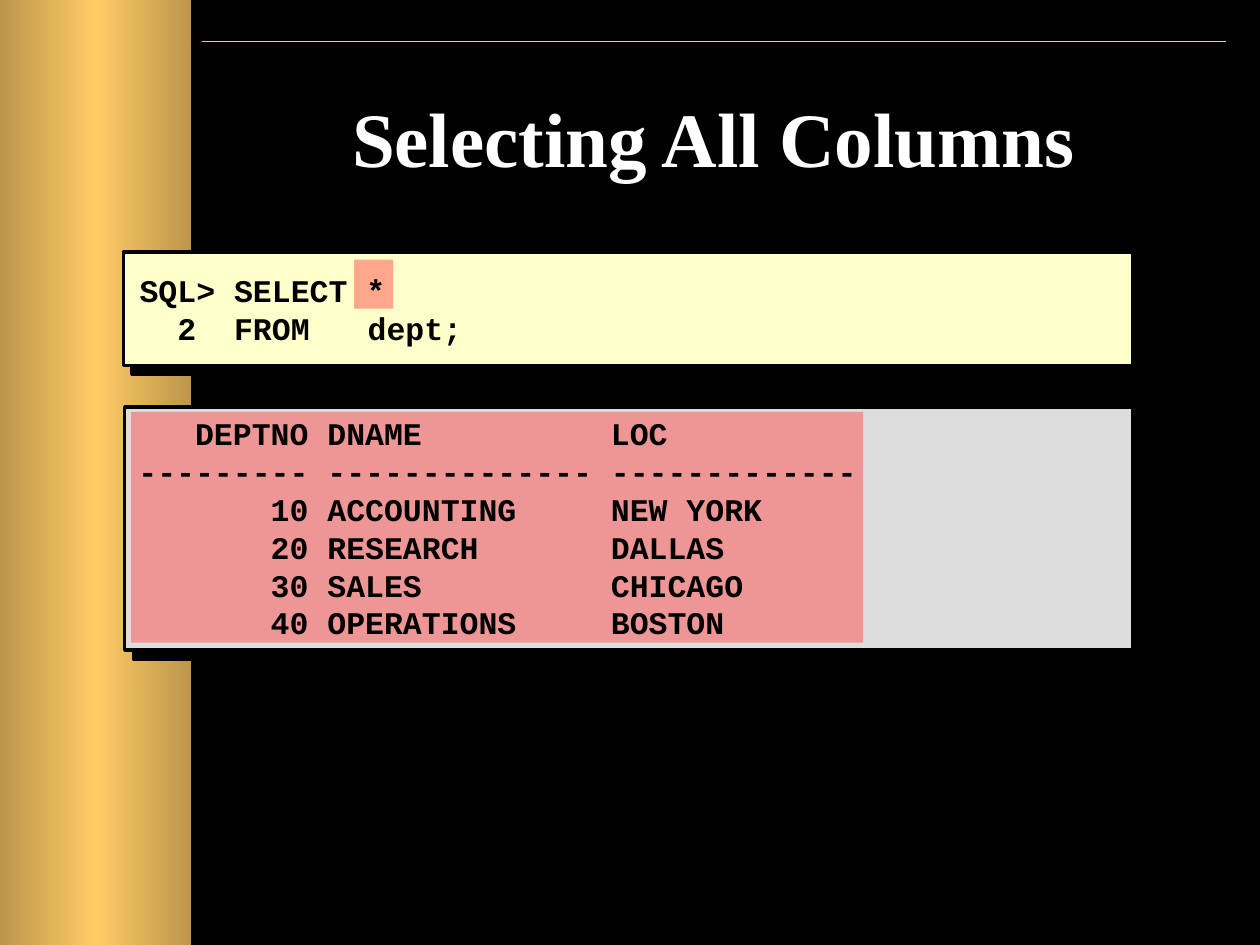
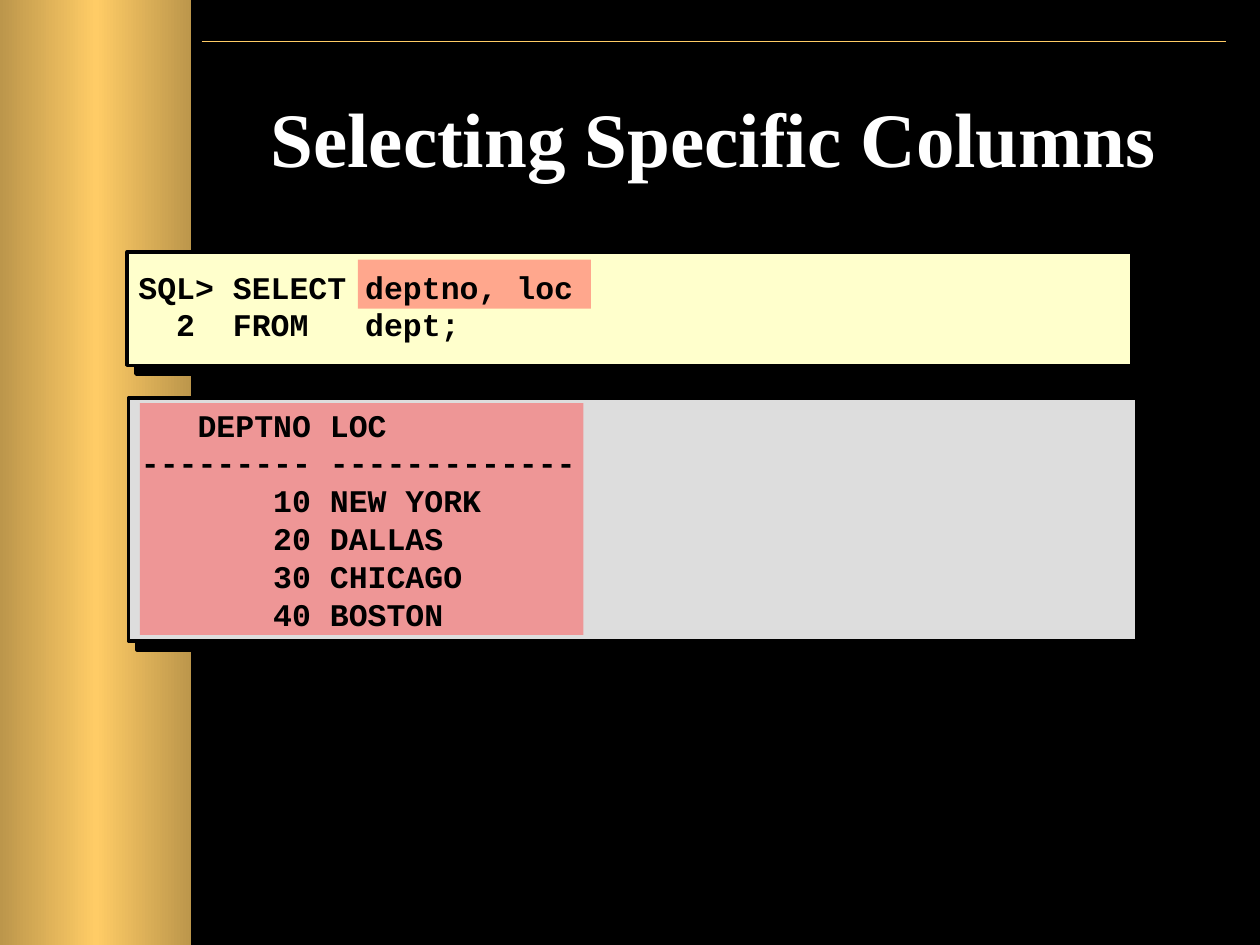
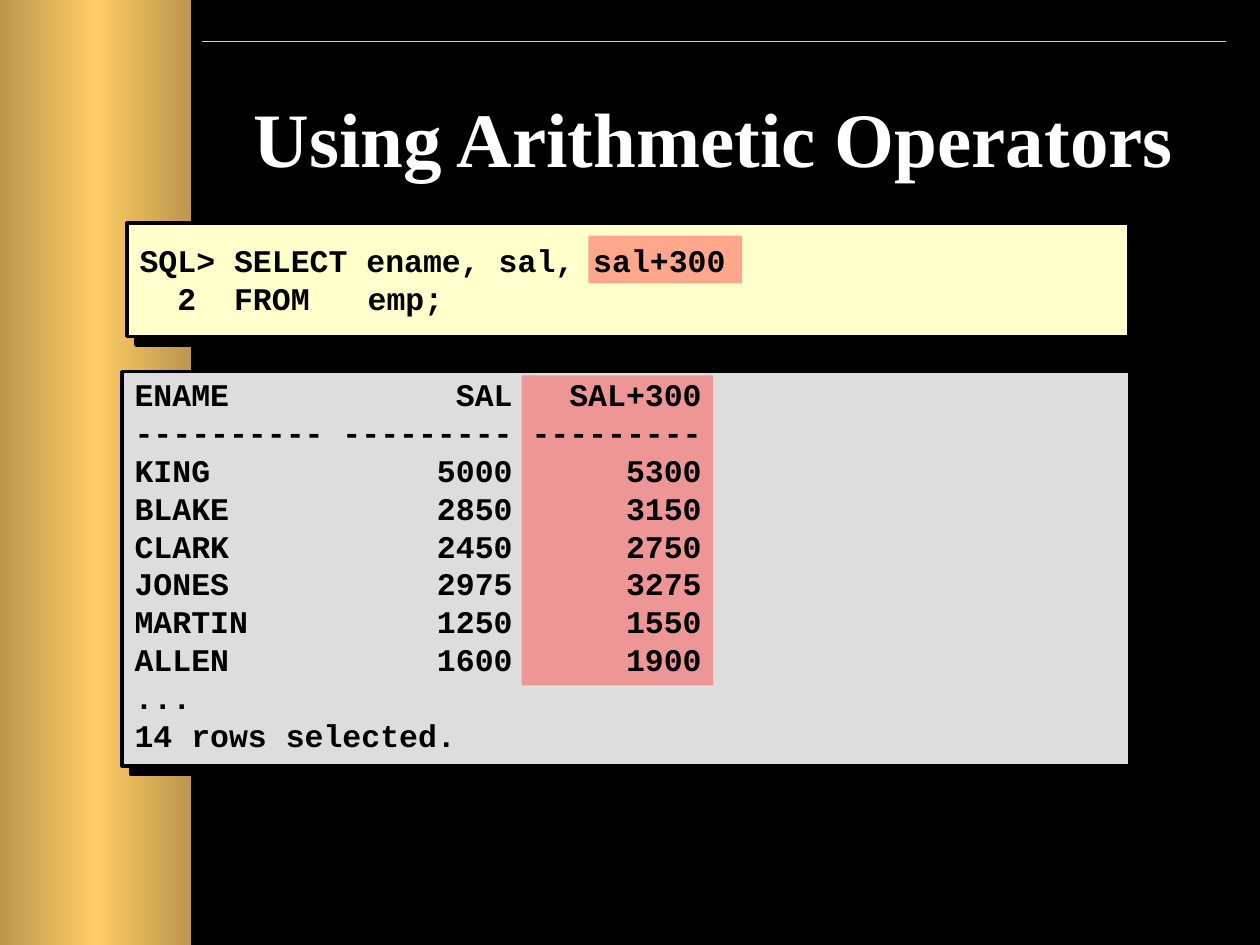
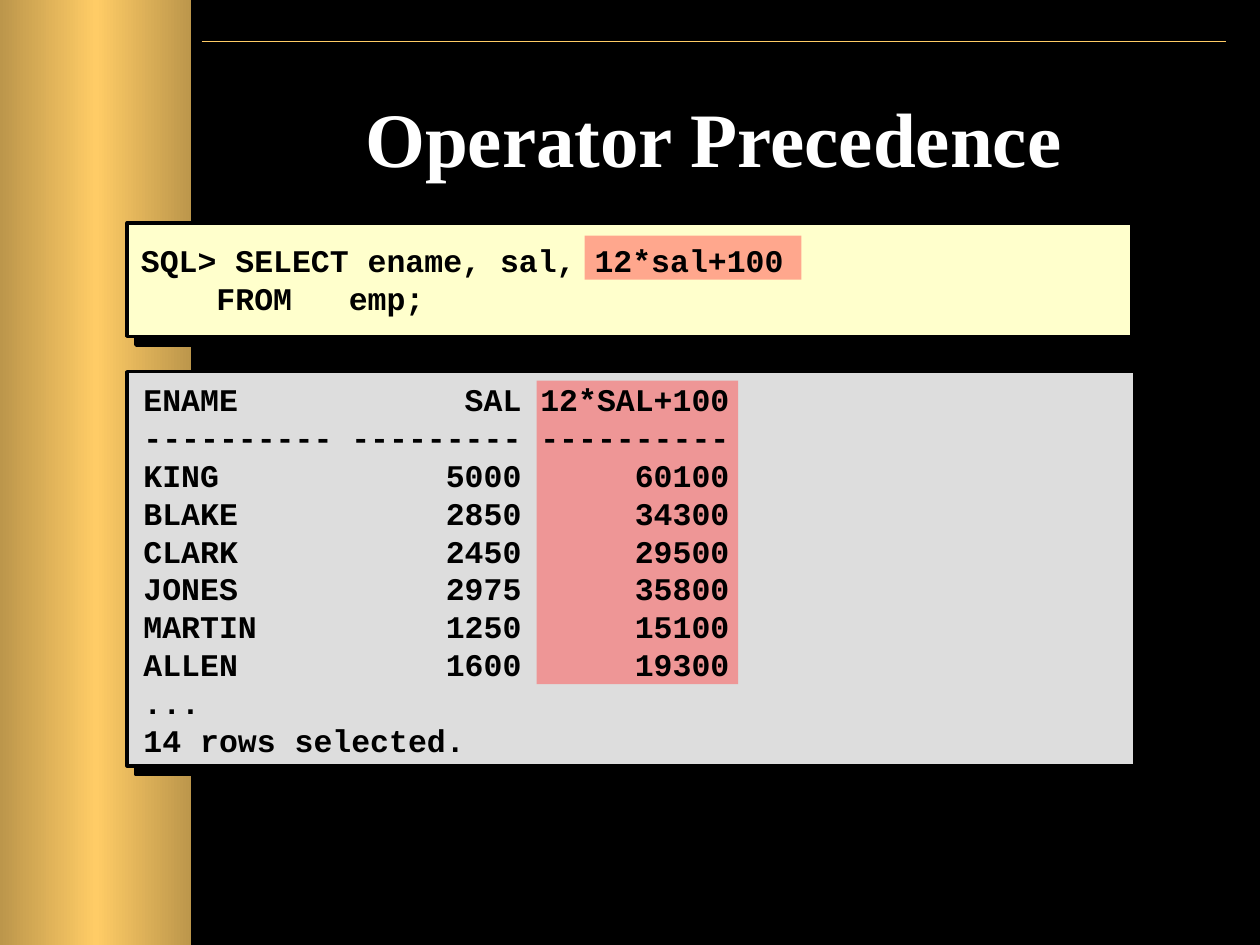
from lxml import etree
from pptx import Presentation
from pptx.dml.color import RGBColor
from pptx.enum.shapes import MSO_CONNECTOR, MSO_SHAPE
from pptx.enum.text import MSO_ANCHOR, PP_ALIGN
from pptx.oxml.ns import qn
from pptx.util import Inches, Pt

STRAIGHT = MSO_CONNECTOR.STRAIGHT
RECTANGLE = MSO_SHAPE.RECTANGLE
TOP, MIDDLE = MSO_ANCHOR.TOP, MSO_ANCHOR.MIDDLE
LEFT, CENTER = PP_ALIGN.LEFT, PP_ALIGN.CENTER

BLACK = RGBColor(0x00, 0x00, 0x00)
WHITE = RGBColor(0xFF, 0xFF, 0xFF)
GOLD = RGBColor(0xFF, 0xCC, 0x66)
CREAM = RGBColor(0xFF, 0xFF, 0xCC)
GREY = RGBColor(0xDD, 0xDD, 0xDD)
RED = RGBColor(0xFF, 0x50, 0x50)

TITLE_FONT, CODE_FONT = "Times New Roman", "Courier New"
TITLE_BOX = (1.59, 0.67, 8.15, 1.25)
QUERY_TABS = (1.31, 1.81)

# Boxes are left, top, width, height in inches.
SLIDES = [
    {
        "title": "Selecting All Columns",
        "query": {
            "panel": (0.98, 2, 8.01, 0.9),
            "highlight": (2.81, 2.06, 0.31, 0.39),
            "text_box": (1.01, 1.99, 7.96, 0.93),
            "lines": ["SQL> SELECT *", "  2  FROM \tdept;"],
        },
        "result": {
            "panel": (0.99, 3.23, 8, 1.93),
            "highlight": (1.04, 3.27, 5.81, 1.83),
            "text_box": (1, 3.24, 7.97, 1.9),
            "lines": [
                "   DEPTNO DNAME          LOC",
                "--------- -------------- -------------",
                "       10 ACCOUNTING     NEW YORK",
                "       20 RESEARCH       DALLAS",
                "       30 SALES          CHICAGO",
                "       40 OPERATIONS     BOSTON",
            ],
        },
    },
    {
        "title": "Selecting Specific Columns",
        "query": {
            "panel": (1.01, 2, 7.97, 0.9),
            "highlight": (2.84, 2.06, 1.85, 0.39),
            "text_box": (1, 1.96, 8, 0.93),
            "lines": ["SQL> SELECT deptno, loc", "  2  FROM   dept;"],
        },
        "result": {
            "panel": (1.02, 3.16, 8, 1.93),
            "highlight": (1.11, 3.2, 3.52, 1.84),
            "text_box": (1.02, 3.17, 7.97, 1.9),
            "lines": [
                "   DEPTNO LOC",
                "--------- -------------",
                "       10 NEW YORK",
                "       20 DALLAS",
                "       30 CHICAGO",
                "       40 BOSTON",
            ],
        },
    },
    {
        "title": "Using Arithmetic Operators",
        "query": {
            "panel": (1.01, 1.77, 7.95, 0.9),
            "highlight": (4.67, 1.87, 1.22, 0.38),
            "text_box": (1.01, 1.75, 7.97, 0.93),
            "lines": ["SQL> SELECT ename, sal, sal+300", "  2  FROM\temp;"],
        },
        "result": {
            "panel": (0.97, 2.95, 8, 3.13),
            "highlight": (4.14, 2.98, 1.52, 2.46),
            "text_box": (0.97, 2.93, 8.03, 3.1),
            "lines": [
                "ENAME            SAL   SAL+300",
                "---------- --------- ---------",
                "KING            5000      5300",
                "BLAKE           2850      3150",
                "CLARK           2450      2750",
                "JONES           2975      3275",
                "MARTIN          1250      1550",
                "ALLEN           1600      1900",
                "...",
                "14 rows selected.",
            ],
        },
    },
    {
        "title": "Operator Precedence",
        "query": {
            "panel": (1.01, 1.77, 7.97, 0.9),
            "highlight": (4.64, 1.87, 1.72, 0.35),
            "text_box": (1.02, 1.75, 8, 0.93),
            "lines": ["SQL> SELECT ename, sal, 12*sal+100", "    FROM   emp;"],
        },
        "result": {
            "panel": (1.01, 2.95, 8, 3.13),
            "highlight": (4.26, 3.02, 1.6, 2.41),
            "text_box": (1.04, 2.97, 7.97, 3.1),
            "lines": [
                "ENAME            SAL 12*SAL+100",
                "---------- --------- ----------",
                "KING            5000      60100",
                "BLAKE           2850      34300",
                "CLARK           2450      29500",
                "JONES           2975      35800",
                "MARTIN          1250      15100",
                "ALLEN           1600      19300",
                "...",
                "14 rows selected.",
            ],
        },
    },
]


def add_xml(parent, tag, **attributes):
    """Append a DrawingML element and return it."""
    child = etree.SubElement(parent, qn(tag))
    for name, value in attributes.items():
        child.set(name, str(value))
    return child


def add_rectangle(slide, box, color):
    rectangle = slide.shapes.add_shape(RECTANGLE, *map(Inches, box))
    rectangle.shadow.inherit = False
    rectangle.fill.solid()
    rectangle.fill.fore_color.rgb = color
    rectangle.line.fill.background()
    return rectangle


def add_text(slide, box, lines, font_name, size, color, align=LEFT, anchor=TOP, tabs=()):
    frame = slide.shapes.add_textbox(*map(Inches, box)).text_frame
    frame.word_wrap = True
    frame.vertical_anchor = anchor
    for index, line in enumerate(lines):
        paragraph = frame.paragraphs[0] if index == 0 else frame.add_paragraph()
        paragraph.text = line
        paragraph.alignment = align
        if tabs:
            tab_list = add_xml(paragraph._p.get_or_add_pPr(), "a:tabLst")
            for position in tabs:
                add_xml(tab_list, "a:tab", pos=Inches(position), algn="l")
        font = paragraph.font
        font.name, font.size, font.bold = font_name, Pt(size), True
        font.color.rgb = color


def add_frame(slide):
    """Draw the gold rule and the shaded band at the left edge."""
    rule = slide.shapes.add_connector(
        STRAIGHT, Inches(1.6), Inches(0.33), Inches(9.73), Inches(0.33))
    rule.line.color.rgb = GOLD
    rule.line.width = Pt(1)
    add_xml(rule._element.spPr, "a:effectLst")

    band = add_rectangle(slide, (0, 0, 1.52, 7.5), GOLD)
    band.fill.gradient()
    band.fill.gradient_angle = 0
    stops = band._element.spPr.find(qn("a:gradFill")).find(qn("a:gsLst"))
    stops.clear()
    for percent in (0, 50, 100):
        stop = add_xml(stops, "a:gs", pos=percent * 1000)
        color = add_xml(stop, "a:srgbClr", val=GOLD)
        if percent != 50:
            add_xml(color, "a:shade", val=50000)


def add_panel(slide, box, color):
    """Draw an outlined box with a hard shadow down to the right."""
    panel = add_rectangle(slide, box, color)
    panel.line.color.rgb = BLACK
    panel.line.width = Pt(2)
    effects = panel._element.spPr.find(qn("a:effectLst"))
    shadow = add_xml(effects, "a:outerShdw", blurRad=0, dist=Pt(7.1),
                     dir=45 * 60000, algn="ctr", rotWithShape=0)
    add_xml(shadow, "a:srgbClr", val=BLACK)


def add_highlight(slide, box):
    highlight = add_rectangle(slide, box, RED)
    color = highlight._element.spPr.find(qn("a:solidFill")).find(qn("a:srgbClr"))
    add_xml(color, "a:alpha", val=50000)


def add_listing(slide, listing, color, **text_options):
    add_panel(slide, listing["panel"], color)
    add_highlight(slide, listing["highlight"])
    add_text(slide, listing["text_box"], listing["lines"], CODE_FONT, 18, BLACK,
             **text_options)


def main():
    prs = Presentation()
    prs.slide_width, prs.slide_height = Inches(10), Inches(7.5)
    background = prs.slide_master.background.fill
    background.solid()
    background.fore_color.rgb = BLACK
    blank = prs.slide_layouts[6]

    for content in SLIDES:
        slide = prs.slides.add_slide(blank)
        add_frame(slide)
        add_text(slide, TITLE_BOX, [content["title"]], TITLE_FONT, 44, WHITE, align=CENTER)
        add_listing(slide, content["result"], GREY)
        add_listing(slide, content["query"], CREAM, anchor=MIDDLE, tabs=QUERY_TABS)

    prs.save("out.pptx")


if __name__ == "__main__":
    main()
